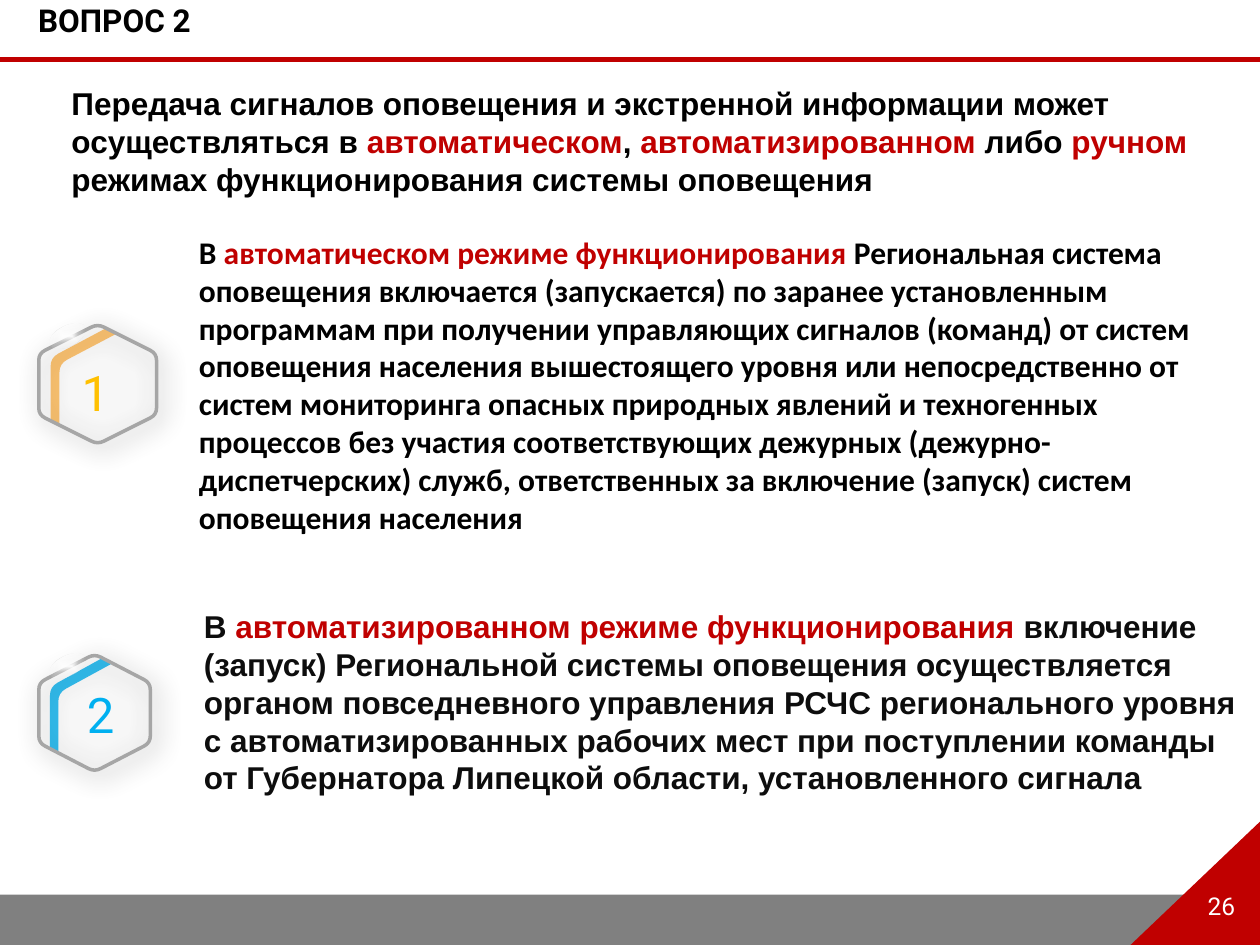
"""Build the slide on automatic and automated modes of the warning system."""
import dataclasses

import pptx
import pptx.dml.color
import pptx.enum.shapes
import pptx.enum.text
import pptx.oxml
import pptx.oxml.ns
import pptx.util

Pt = pptx.util.Pt
rgb = pptx.dml.color.RGBColor.from_string
qn = pptx.oxml.ns.qn
CENTER = pptx.enum.text.PP_ALIGN.CENTER
SHAPE = pptx.enum.shapes.MSO_SHAPE


@dataclasses.dataclass(frozen=True)
class Theme:
    red: str = "C00000"
    grey: str = "808080"
    rim: str = "A6A6A6"
    white: str = "FFFFFF"
    black: str = "000000"
    ink: str = "0D0D0D"
    body: int = 18
    numeral: int = 28
    page: int = 14


theme = Theme()
A_NS = 'xmlns:a="http://schemas.openxmlformats.org/drawingml/2006/main"'
FRAME_SHADOW = (
    f'<a:effectLst {A_NS}><a:outerShdw blurRad="190500" dist="50800" dir="2700000" '
    f'algn="ctr" rotWithShape="0"><a:srgbClr val="{theme.black}"><a:alpha val="40000"/>'
    "</a:srgbClr></a:outerShdw></a:effectLst>"
)
GLOSS_STOPS = "".join(
    f'<a:gs pos="{position}000"><a:srgbClr val="{theme.white}">'
    f'<a:alpha val="{alpha}000"/></a:srgbClr></a:gs>'
    for position, alpha in [(0, 100), (35, 30), (72, 2), (100, 0)]
)
GLOSS_FILL = (
    f'<a:gradFill {A_NS} rotWithShape="1"><a:gsLst>{GLOSS_STOPS}</a:gsLst>'
    '<a:path path="shape"><a:fillToRect l="50000" t="50000" r="50000" b="50000"/>'
    "</a:path></a:gradFill>"
)

deck = pptx.Presentation()
deck.slide_width, deck.slide_height = Pt(720), Pt(540)
slide = deck.slides.add_slide(deck.slide_layouts[6])
shapes = slide.shapes


def add_text(left, top, width, height, runs, font, size, bold=True, margins=(7.2, 3.6)):
    """Add a wrapped text box of (text, colour) runs and return its paragraph."""
    frame = shapes.add_textbox(Pt(left), Pt(top), Pt(width), Pt(height)).text_frame
    frame.word_wrap = True
    frame.margin_left = frame.margin_right = Pt(margins[0])
    frame.margin_top = frame.margin_bottom = Pt(margins[1])
    paragraph = frame.paragraphs[0]
    for text, color in runs:
        run = paragraph.add_run()
        run.text = text
        run.font.name, run.font.size, run.font.bold = font, Pt(size), bold
        run.font.color.rgb = rgb(color)
    return paragraph


def add_outline(corners, fill, opacity=100):
    """Add a filled polygon; each corner is (x, y, rounding length)."""
    points = []
    for i, (x, y, rounding) in enumerate(corners):
        if not rounding:
            points.append((x, y))
            continue
        ends = []
        for nx, ny, _ in (corners[i - 1], corners[(i + 1) % len(corners)]):
            share = rounding / ((nx - x) ** 2 + (ny - y) ** 2) ** 0.5
            ends.append((x + (nx - x) * share, y + (ny - y) * share))
        (ax, ay), (bx, by) = ends
        for t in (0, 0.25, 0.5, 0.75, 1):
            a, m, b = (1 - t) ** 2, 2 * t * (1 - t), t ** 2
            points.append((a * ax + m * x + b * bx, a * ay + m * y + b * by))
    points = [(Pt(x), Pt(y)) for x, y in points]
    builder = shapes.build_freeform(*points[0])
    builder.add_line_segments(points[1:], close=True)
    outline = builder.convert_to_shape()
    outline.shadow.inherit = False
    outline.fill.solid()
    outline.fill.fore_color.rgb = rgb(fill)
    outline.line.fill.background()
    if opacity < 100:
        color = outline.fill._xPr.find(qn("a:solidFill"))[0]
        color.append(pptx.oxml.parse_xml(f'<a:alpha {A_NS} val="{opacity}000"/>'))
    return outline


footer = shapes.add_shape(SHAPE.RECTANGLE, Pt(0), Pt(511.2), Pt(720), Pt(28.8))
footer.shadow.inherit = False
footer.fill.solid()
footer.fill.fore_color.rgb = rgb(theme.grey)
footer.line.fill.background()

header_rule = shapes.add_connector(
    pptx.enum.shapes.MSO_CONNECTOR.STRAIGHT, Pt(0), Pt(34), Pt(720), Pt(34))
header_rule.line.color.rgb = rgb(theme.red)
header_rule.line.width = Pt(2.34)
header_rule._element.spPr.append(pptx.oxml.parse_xml(f"<a:effectLst {A_NS}/>"))

add_outline([(720, 469.5, 0), (646, 540, 0), (720, 540, 0)], theme.red)
page_number = add_text(678.2, 511.9, 39.6, 14.4, [("26", theme.white)],
                       "Roboto", theme.page, False, (0, 0))
page_number.alignment = CENTER
page_number.line_spacing = Pt(13.9)

add_text(33.8, 44.6, 671.8, 72.7, [
    ("Передача сигналов оповещения и экстренной информации может осуществляться в ", theme.black),
    ("автоматическом", theme.red),
    (", ", theme.black),
    ("автоматизированном", theme.red),
    (" либо ", theme.black),
    ("ручном ", theme.red),
    ("режимах функционирования системы оповещения", theme.black),
], "Arial", theme.body)

HEXAGON = [(0.5, 0), (1, 0.245), (1, 0.755), (0.5, 1), (0, 0.755), (0, 0.245)]
BAND = [(0.56, 0.04, 0), (0.66, 0.08, 0), (0.175, 0.33, 5), (0.175, 0.84, 0),
        (0.1, 0.81, 0), (0.1, 0.28, 5)]
badges = [
    ("2", 22.2, 373.7, 63.7, 67.3, "00B0F0", "00B0F0", 38.2, 387.4),
    ("1", 22.2, 185.2, 67.3, 68.7, "FFB850", "FFC000", 35.3, 203.8),
]
for numeral, left, top, width, height, band_color, color, text_left, text_top in badges:
    add_outline([(left + x * width, top + y * height, r) for x, y, r in BAND], band_color)
    hexagon = [(left + x * width, top + y * height, 4) for x, y in HEXAGON]
    add_outline(hexagon, theme.white, 13)
    frame = add_outline(hexagon, theme.white, 8)
    frame.line.color.rgb = rgb(theme.rim)
    frame.line.width = Pt(2)
    frame_properties = frame._element.spPr
    frame_properties.replace(frame_properties.find(qn("a:effectLst")),
                             pptx.oxml.parse_xml(FRAME_SHADOW))
    gloss = shapes.add_shape(SHAPE.OVAL, Pt(27.4), Pt(top + 1.3), Pt(22), Pt(11.5))
    gloss.rotation = 333.3
    gloss.shadow.inherit = False
    gloss.line.fill.background()
    gloss.fill.solid()
    gloss_properties = gloss._element.spPr
    gloss_properties.replace(gloss_properties.find(qn("a:solidFill")),
                             pptx.oxml.parse_xml(GLOSS_FILL))
    add_text(text_left, text_top, 38.5, 41, [(numeral, color)],
             "Roboto", theme.numeral, False).alignment = CENTER

add_text(106.6, 129.6, 612, 205.9, [
    ("В ", theme.black),
    ("автоматическом режиме функционирования ", theme.red),
    ("Региональная система оповещения включается (запускается) по заранее установленным "
     "программам при получении управляющих сигналов (команд) от систем оповещения населения "
     "вышестоящего уровня или непосредственно от систем мониторинга опасных природных явлений "
     "и техногенных процессов без участия соответствующих дежурных (дежурно-диспетчерских) "
     "служб, ответственных за включение (запуск) систем оповещения населения", theme.black),
], "Calibri", theme.body)

add_text(109.4, 343.4, 610.6, 116.6, [
    ("В ", theme.ink),
    ("автоматизированном режиме функционирования ", theme.red),
    ("включение (запуск) Региональной системы оповещения осуществляется органом повседневного "
     "управления РСЧС регионального уровня с автоматизированных рабочих мест при поступлении "
     "команды от Губернатора Липецкой области, установленного сигнала", theme.ink),
], "Arial", theme.body)

add_text(16.6, 0, 700, 22.3, [("ВОПРОС 2", theme.black)],
         "Roboto", theme.body, True, (5.2, 0.7))

deck.save("out.pptx")
